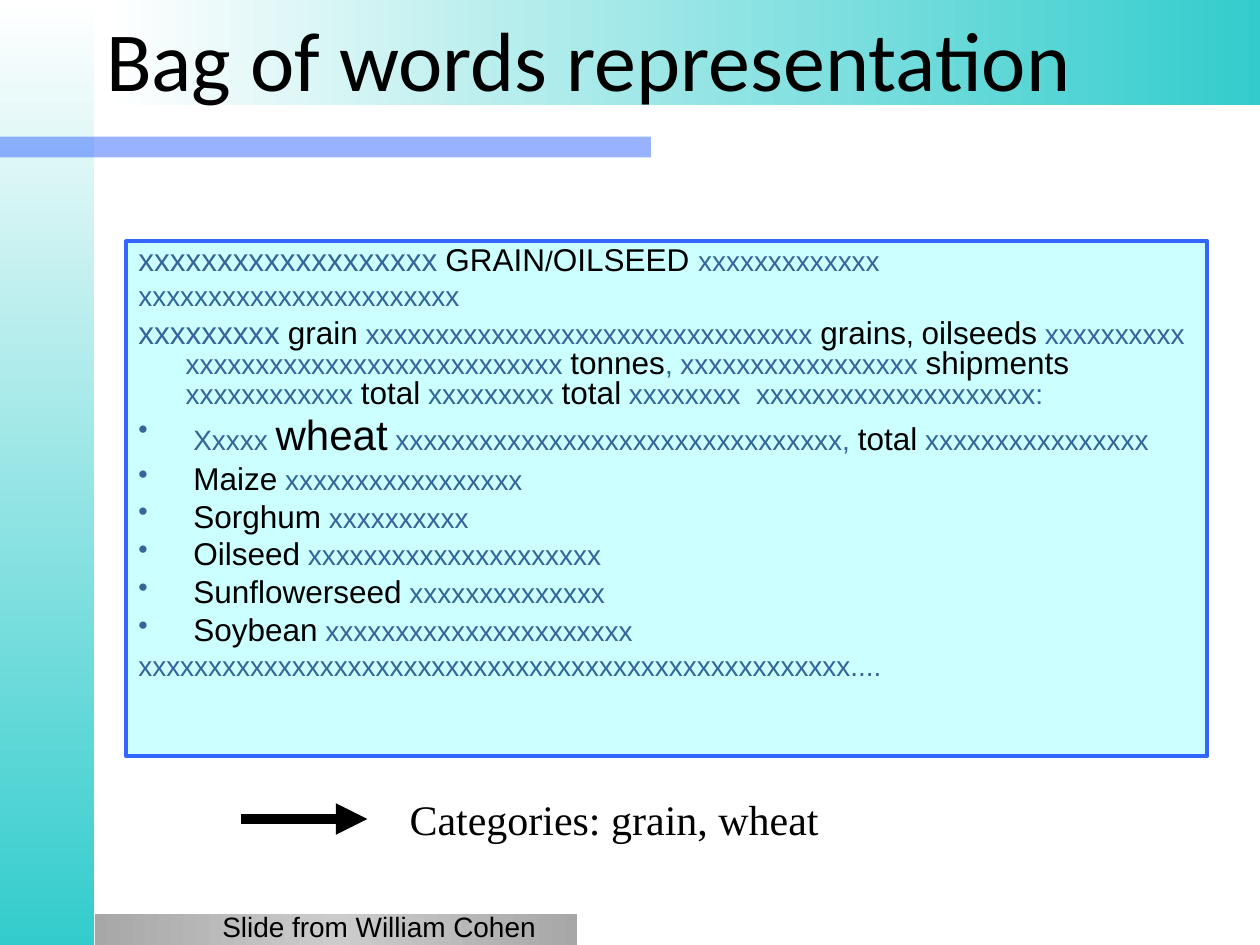
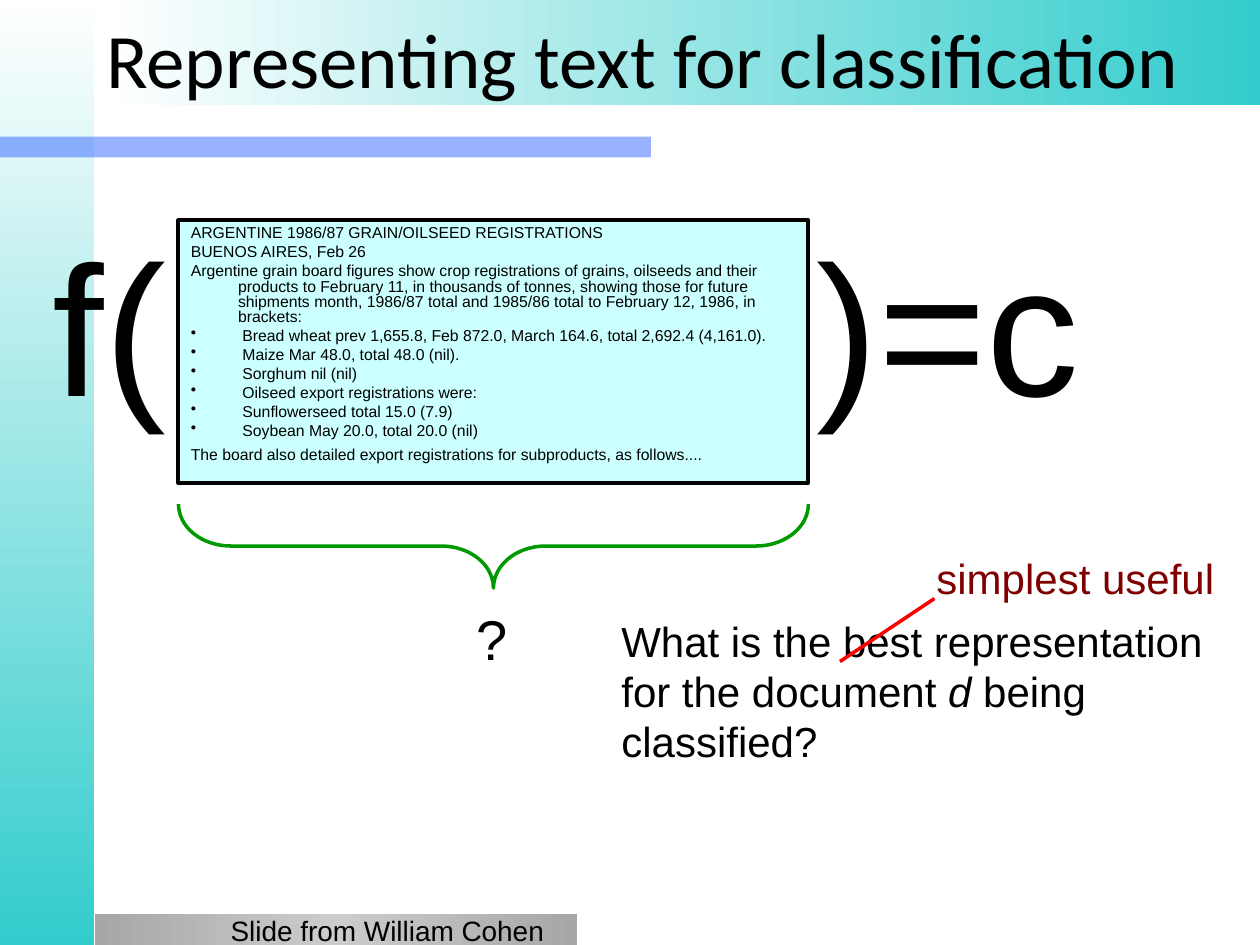
from dataclasses import dataclass

from lxml.etree import SubElement
from pptx import Presentation
from pptx.dml.color import RGBColor
from pptx.enum.shapes import MSO_CONNECTOR, MSO_SHAPE
from pptx.enum.text import MSO_ANCHOR, MSO_AUTO_SIZE, PP_ALIGN
from pptx.oxml.ns import qn
from pptx.shapes.autoshape import Shape
from pptx.shapes.connector import Connector
from pptx.slide import Slide
from pptx.util import Pt

BLACK = RGBColor(0x00, 0x00, 0x00)
WHITE = RGBColor(0xFF, 0xFF, 0xFF)
TEAL = RGBColor(0x33, 0xCC, 0xCC)
BLUE = RGBColor(0x33, 0x66, 0xFF)
GREY = RGBColor(0xA7, 0xA7, 0xA7)
LIGHT_GREY = RGBColor(0xCC, 0xCC, 0xCC)
PALE_CYAN = RGBColor(0xCC, 0xFF, 0xFF)
STEEL = RGBColor(0x33, 0x66, 0x99)
GREEN = RGBColor(0x00, 0x99, 0x00)
RED = RGBColor(0xFF, 0x00, 0x00)
MAROON = RGBColor(0x80, 0x00, 0x00)

SANS, SERIF, TITLE_FONT = "Arial", "Times New Roman", "Calibri"
HANGING_INDENT = Pt(27)


@dataclass(frozen=True)
class Box:
    """A rectangle on the slide, in points."""
    left: float
    top: float
    width: float
    height: float

    def lengths(self) -> tuple[Pt, Pt, Pt, Pt]:
        """Return the four lengths for python-pptx."""
        return Pt(self.left), Pt(self.top), Pt(self.width), Pt(self.height)


@dataclass(frozen=True)
class Style:
    """Size, colour, face and slant of a piece of text."""
    size: float
    color: RGBColor = BLACK
    face: str = SANS
    italic: bool | None = None


@dataclass(frozen=True)
class Label:
    """A free text with its place and style."""
    box: Box
    text: str
    style: Style
    align: PP_ALIGN = PP_ALIGN.LEFT
    wrap: bool = True


@dataclass(frozen=True)
class DocLine:
    """A paragraph of a document, as styled pieces."""
    pieces: tuple[tuple[Style, str], ...]
    bulleted: bool = False
    space_before: float | None = None


@dataclass(frozen=True)
class Band:
    """A gradient band of the slide background."""
    box: Box
    colors: tuple[RGBColor, ...]
    angle: int = 0


BANDS = (
    Band(Box(0, 0, 54, 540), (WHITE, TEAL), 270),
    Band(Box(54, 522, 276, 18), (GREY, LIGHT_GREY, GREY)),
    Band(Box(60.5, 0, 659.5, 60), (WHITE, TEAL)),
)
RULE_BOX = Box(0, 78, 372, 12)
TITLE_BOX = Box(53.5, 0, 666.5, 66)
CREDIT, CREDIT_STYLE = "Slide from William Cohen", Style(16)

NOISE, BIG_NOISE = Style(16, STEEL), Style(18, STEEL)
MARK, WORD, TOP_WORD = Style(16), Style(18), Style(24)
CROPS = (
    ("Maize", "xxxxxxxxxxxxxxxxx"),
    ("Sorghum", "xxxxxxxxxx"),
    ("Oilseed", "xxxxxxxxxxxxxxxxxxxxx"),
    ("Sunflowerseed", "xxxxxxxxxxxxxx"),
    ("Soybean", "xxxxxxxxxxxxxxxxxxxxxx"),
)
MASKED_REPORT = (
    DocLine(((BIG_NOISE, "xxxxxxxxxxxxxxxxxxx"), (NOISE, " "), (WORD, "GRAIN"), (MARK, "/"),
             (WORD, "OILSEED "), (NOISE, "xxxxxxxxxxxxx"))),
    DocLine(((NOISE, "xxxxxxxxxxxxxxxxxxxxxxx"),)),
    DocLine((
        (BIG_NOISE, "xxxxxxxxx"), (MARK, " "), (WORD, "grain"),
        (NOISE, " xxxxxxxxxxxxxxxxxxxxxxxxxxxxxxxx "), (WORD, "grains"), (MARK, ", "),
        (WORD, "oilseeds"), (NOISE, " xxxxxxxxxx xxxxxxxxxxxxxxxxxxxxxxxxxxx "),
        (WORD, "tonnes"), (NOISE, ", xxxxxxxxxxxxxxxxx "), (WORD, "shipments"),
        (NOISE, " xxxxxxxxxxxx "), (WORD, "total"), (NOISE, " xxxxxxxxx "),
        (WORD, "total"), (NOISE, " xxxxxxxx  xxxxxxxxxxxxxxxxxxxx:"),
    )),
    DocLine((
        (NOISE, " Xxxxx "), (TOP_WORD, "wheat"),
        (NOISE, " xxxxxxxxxxxxxxxxxxxxxxxxxxxxxxxx, "), (WORD, "total"),
        (NOISE, " xxxxxxxxxxxxxxxx"),
    ), bulleted=True),
    *(DocLine(((NOISE, " "), (WORD, crop), (NOISE, f" {masked}")), bulleted=True)
      for crop, masked in CROPS),
    DocLine(((NOISE, "xxxxxxxxxxxxxxxxxxxxxxxxxxxxxxxxxxxxxxxxxxxxxxxxxxx...."),)),
)

SMALL = Style(9)
REPORT_HEAD = (
    "ARGENTINE 1986/87 GRAIN/OILSEED REGISTRATIONS",
    "BUENOS AIRES, Feb 26",
    "Argentine grain board figures show crop registrations of grains, oilseeds and their "
    "products to February 11, in thousands of tonnes, showing those for future shipments "
    "month, 1986/87 total and 1985/86 total to February 12, 1986, in brackets:",
)
REPORT_ITEMS = (
    " Bread wheat prev 1,655.8, Feb 872.0, March 164.6, total 2,692.4 (4,161.0).",
    " Maize Mar 48.0, total 48.0 (nil).",
    " Sorghum nil (nil)",
    " Oilseed export registrations were:",
    " Sunflowerseed total 15.0 (7.9)",
    " Soybean May 20.0, total 20.0 (nil)",
)
REPORT_END = "The board also detailed export registrations for subproducts, as follows...."
REPORT = (
    *(DocLine(((SMALL, text),)) for text in REPORT_HEAD),
    *(DocLine(((SMALL, text),), bulleted=True) for text in REPORT_ITEMS),
    DocLine(((SMALL, REPORT_END),), space_before=4.8),
)

FORMULA, BODY = Style(106), Style(24)
CATEGORIES = Label(Box(168, 450, 366, 36), "Categories: grain, wheat",
                   Style(24, face=SERIF), PP_ALIGN.CENTER)
FORMULA_LABELS = (
    Label(Box(23, 117, 79, 135), "f(", FORMULA, wrap=False),
    Label(Box(459.5, 117, 166.5, 136), ")=c", FORMULA, wrap=False),
    Label(Box(264, 342, 34, 45), "?", Style(32), PP_ALIGN.CENTER, wrap=False),
    Label(Box(528, 312, 175, 37), "simplest useful", Style(24, MAROON), wrap=False),
)
QUESTION_BOX = Box(348, 348, 354, 94)
QUESTION = (
    (BODY, "What is the best representation for the document "),
    (Style(24, italic=True), "d"),
    (BODY, " being classified?"),
)


def apply_style(font, style: Style) -> None:
    """Set size, colour, face and slant of a font."""
    font.size = Pt(style.size)
    font.color.rgb = style.color
    font.name = style.face
    if style.italic:
        font.italic = True


def fill_paragraph(paragraph, pieces: tuple[tuple[Style, str], ...]) -> None:
    """Write styled pieces, with the style on the paragraph if it is one."""
    uniform = len({style for style, _ in pieces}) == 1
    if uniform:
        apply_style(paragraph.font, pieces[0][0])
    for style, text in pieces:
        run = paragraph.add_run()
        run.text = text
        if not uniform:
            apply_style(run.font, style)


def add_plain_shape(slide: Slide, kind: MSO_SHAPE, box: Box) -> Shape:
    """Add a shape without shadow and outline."""
    shape = slide.shapes.add_shape(kind, *box.lengths())
    shape.shadow.inherit = False
    shape.line.fill.background()
    return shape


def add_band(slide: Slide, band: Band) -> None:
    """Add a band with evenly spaced gradient stops."""
    shape = add_plain_shape(slide, MSO_SHAPE.RECTANGLE, band.box)
    shape.fill.gradient()
    shape.fill.gradient_angle = band.angle
    stops = shape.fill._xPr.find(qn("a:gradFill")).find(qn("a:gsLst"))
    stops.clear()
    step = 100000 // (len(band.colors) - 1)
    for index, color in enumerate(band.colors):
        stop = SubElement(stops, qn("a:gs"), pos=str(index * step))
        SubElement(stop, qn("a:srgbClr"), val=str(color))


def add_rule(slide: Slide) -> None:
    """Add the half transparent rule under the title."""
    rule = add_plain_shape(slide, MSO_SHAPE.RECTANGLE, RULE_BOX)
    rule.fill.solid()
    rule.fill.fore_color.rgb = BLUE
    color = rule.fill._xPr.find(qn("a:solidFill")).find(qn("a:srgbClr"))
    SubElement(color, qn("a:alpha"), val="50000")


def add_label(slide: Slide, label: Label) -> Shape:
    """Add a text box with one style."""
    text_box = slide.shapes.add_textbox(*label.box.lengths())
    frame = text_box.text_frame
    frame.word_wrap = label.wrap
    if not label.wrap:
        frame.auto_size = MSO_AUTO_SIZE.SHAPE_TO_FIT_TEXT
    frame.paragraphs[0].alignment = label.align
    fill_paragraph(frame.paragraphs[0], ((label.style, label.text),))
    return text_box


def add_document(slide: Slide, box: Box, border: RGBColor,
                 lines: tuple[DocLine, ...], gap: float) -> None:
    """Add a framed document with hanging paragraphs."""
    document = add_plain_shape(slide, MSO_SHAPE.RECTANGLE, box)
    document.fill.solid()
    document.fill.fore_color.rgb = PALE_CYAN
    document.line.color.rgb = border
    document.line.width = Pt(2.25)
    frame = document.text_frame
    frame.word_wrap = True
    frame.vertical_anchor = MSO_ANCHOR.TOP
    for index, line in enumerate(lines):
        paragraph = frame.add_paragraph() if index else frame.paragraphs[0]
        paragraph.alignment = PP_ALIGN.LEFT
        paragraph.line_spacing = 0.8
        paragraph.space_before = Pt(line.space_before or gap)
        properties = paragraph._p.get_or_add_pPr()
        properties.set("marL", str(HANGING_INDENT))
        properties.set("indent", str(-HANGING_INDENT))
        if line.bulleted:
            SubElement(properties, qn("a:buChar"), char="•")
        fill_paragraph(paragraph, line.pieces)


def add_line(slide: Slide, start: tuple[float, float], end: tuple[float, float],
             color: RGBColor, width: float) -> Connector:
    """Add a straight line without shadow."""
    line = slide.shapes.add_connector(MSO_CONNECTOR.STRAIGHT, *map(Pt, start + end))
    line.line.color.rgb = color
    line.line.width = Pt(width)
    SubElement(line._element.spPr, qn("a:effectLst"))
    return line


def add_base_slide(deck: Presentation, title: str, title_size: float) -> Slide:
    """Add a blank slide with the shared bands and a title."""
    slide = deck.slides.add_slide(deck.slide_layouts[6])
    add_band(slide, BANDS[0])
    add_rule(slide)
    for band in BANDS[1:]:
        add_band(slide, band)
    heading = add_label(slide, Label(TITLE_BOX, title, Style(title_size, face=TITLE_FONT)))
    heading.text_frame.vertical_anchor = MSO_ANCHOR.MIDDLE
    return slide


def build_bag_of_words(deck: Presentation) -> None:
    """Build the slide with the masked report."""
    slide = add_base_slide(deck, "Bag of words representation", 48)
    add_document(slide, Box(72, 138, 618, 294), BLUE, MASKED_REPORT, 4.3)
    add_label(slide, CATEGORIES)
    arrow = add_line(slide, (138, 468), (210, 468), BLACK, 6)
    SubElement(arrow.line._ln, qn("a:tailEnd"), type="triangle")
    add_label(slide, Label(Box(120, 516, 204, 24), CREDIT, CREDIT_STYLE))


def build_classification(deck: Presentation) -> None:
    """Build the slide with the formula around the report."""
    slide = add_base_slide(deck, "Representing text for classification", 44)
    add_label(slide, Label(Box(84, 518.4, 234, 24), CREDIT, CREDIT_STYLE, PP_ALIGN.RIGHT))
    add_document(slide, Box(102, 126, 360, 150), BLACK, REPORT, 2.2)
    for label in FORMULA_LABELS:
        add_label(slide, label)
    brace = add_plain_shape(slide, MSO_SHAPE.LEFT_BRACE, Box(258, 132, 48, 360))
    brace.rotation = 270
    brace.adjustments[0] = 0.625
    brace.fill.background()
    brace.line.color.rgb = GREEN
    brace.line.width = Pt(2)
    question = slide.shapes.add_textbox(*QUESTION_BOX.lengths())
    question.text_frame.word_wrap = True
    fill_paragraph(question.text_frame.paragraphs[0], QUESTION)
    add_line(slide, (534, 342), (480, 378), RED, 2)


def main() -> None:
    """Build and save the deck."""
    deck = Presentation()
    deck.slide_width, deck.slide_height = Pt(720), Pt(540)
    build_bag_of_words(deck)
    build_classification(deck)
    deck.save("out.pptx")


if __name__ == "__main__":
    main()
